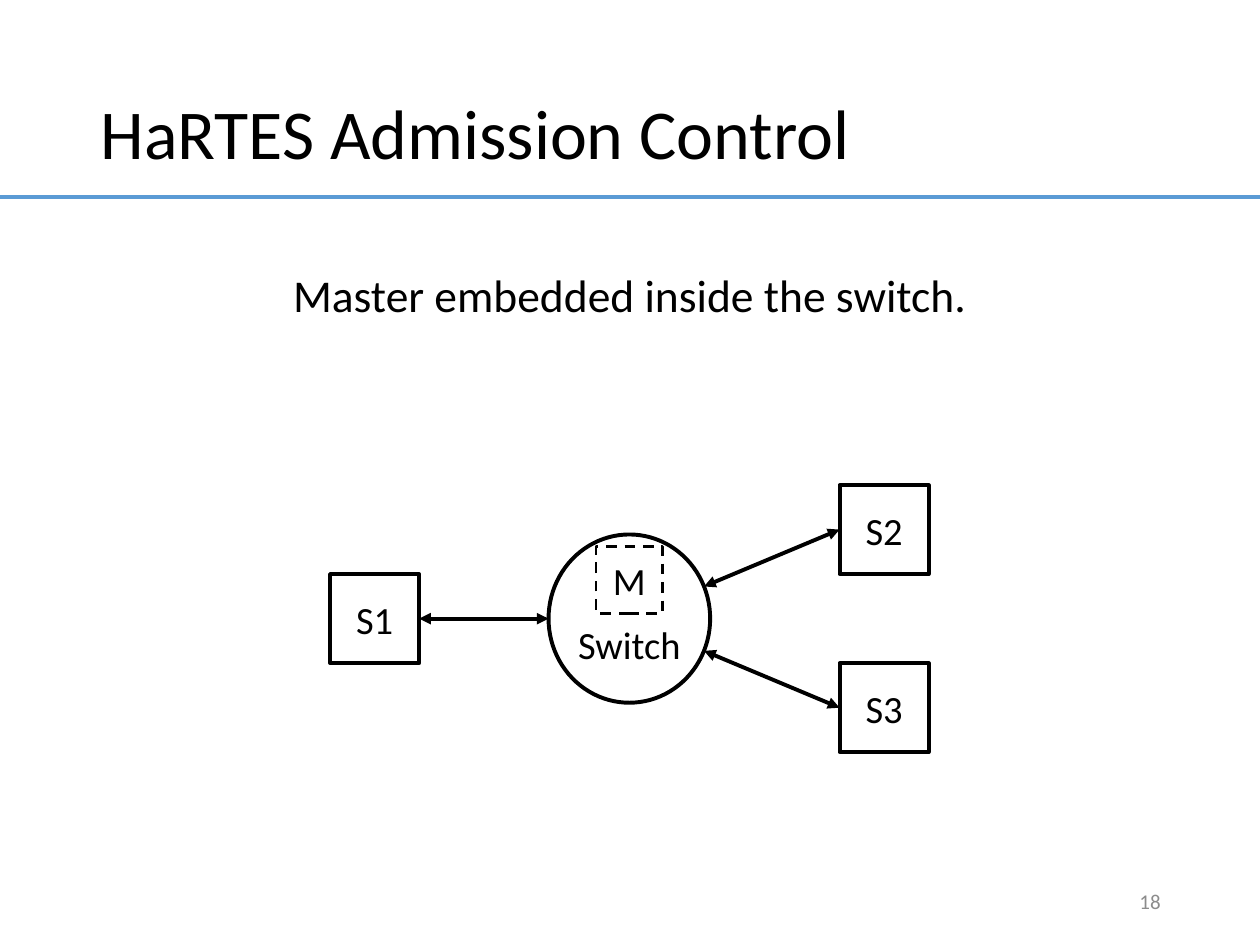
from collections import namedtuple
from math import cos, pi, sin

from lxml import etree
from pptx import Presentation
from pptx.dml.color import RGBColor
from pptx.enum.dml import MSO_LINE
from pptx.enum.shapes import MSO_CONNECTOR as CONNECTOR, MSO_SHAPE as SHAPE
from pptx.enum.text import MSO_ANCHOR as ANCHOR, PP_ALIGN as ALIGN
from pptx.oxml.ns import qn
from pptx.util import Inches, Pt

COLORS = {"ink": "000000", "rule": "5B9BD5", "number": "8C8C8C"}
FONT = "Calibri"
LEFT_SIDE, RIGHT_SIDE = 1, 3  # connection sites of a rectangle

Box = namedtuple("Box", "x y w h")
PAGE = Box(0, 0, 10, 7.5)


def part(box, x, y, w, h):
    """A box inside another, given in shares of it."""
    return Box(box.x + x * box.w, box.y + y * box.h, w * box.w, h * box.h)


def color(name):
    return RGBColor.from_string(COLORS[name])


def emu(lengths):
    return [Inches(length) for length in lengths]


def write(shape, text, size, align=ALIGN.CENTER, anchor=ANCHOR.MIDDLE, ink="ink"):
    frame = shape.text_frame
    frame.word_wrap = True
    frame.vertical_anchor = anchor
    paragraph = frame.paragraphs[0]
    paragraph.text = text
    paragraph.alignment = align
    paragraph.font.name = FONT
    paragraph.font.size = Pt(size)
    paragraph.font.color.rgb = color(ink)
    return paragraph


def add_label(slide, box, text, size, **style):
    return write(slide.shapes.add_textbox(*emu(box)), text, size, **style)


def add_outline(slide, kind, box, text=None, weight=2.25):
    shape = slide.shapes.add_shape(kind, *emu(box))
    shape.shadow.inherit = False
    shape.fill.background()
    shape.line.color.rgb = color("ink")
    shape.line.width = Pt(weight)
    if text:
        frame = shape.text_frame
        frame.margin_left = frame.margin_right = 0
        write(shape, text, 22)
    return shape


def add_line(slide, start, end, ink="ink", arrows=False):
    line = slide.shapes.add_connector(CONNECTOR.STRAIGHT, *emu(start + end))
    line.line.color.rgb = color(ink)
    line.line.width = Pt(2.25)
    if arrows:
        outline = line.line._get_or_add_ln()
        for tip in ("a:headEnd", "a:tailEnd"):
            etree.SubElement(outline, qn(tip), type="triangle")
    etree.SubElement(line._element.spPr, qn("a:effectLst"))
    return line


def add_header(slide, box):
    # Blue rule across the page, then the title above it
    rule_y = box.y + 0.85 * box.h
    add_line(slide, (PAGE.x, rule_y), (PAGE.w, rule_y), ink="rule")
    title = add_label(slide, part(box, 0.07, 0.18, 0.86, 0.82),
                      "HaRTES Admission Control", 40, align=ALIGN.LEFT)
    title.line_spacing = 0.9


def add_statement(slide, box):
    statement = add_label(slide, box, "Master embedded inside the switch.", 26,
                          anchor=ANCHOR.TOP)
    statement.line_spacing = 0.9


def add_network(slide, box):
    center_x, center_y = box.x + box.w / 2, box.y + box.h / 2
    node = box.h / 3
    right = box.x + box.w - node

    # Switch
    switch = part(box, 0.365, 0.185, 0.27, 0.63)
    add_outline(slide, SHAPE.OVAL, switch)

    # Stations: name, left, row, joined side, angle on the switch's rim
    stations = [
        ("S1", box.x, 1, RIGHT_SIDE, pi),
        ("S2", right, 0, LEFT_SIDE, -pi / 8),
        ("S3", right, 2, LEFT_SIDE, pi / 8),
    ]
    for name, left, row, side, angle in stations:
        station = add_outline(slide, SHAPE.RECTANGLE,
                              Box(left, box.y + row * node, node, node), name)
        rim = (center_x + switch.w / 2 * cos(angle),
               center_y + switch.h / 2 * sin(angle))
        link = add_line(slide, rim, rim, arrows=True)
        link.end_connect(station, side)

    # Switch label and the master embedded above it
    add_label(slide, part(box, 0.36, 0.485, 0.28, 0.28), "Switch", 22,
              anchor=ANCHOR.TOP)
    side = box.h / 4
    master = add_outline(
        slide, SHAPE.RECTANGLE,
        Box(center_x - side / 2, box.y + 0.23 * box.h, side, side), "M", 1.5)
    master.line.dash_style = MSO_LINE.DASH


def add_page_number(slide, box):
    add_label(slide, box, "18", 12, align=ALIGN.RIGHT, ink="number")


def main():
    deck = Presentation()
    deck.slide_width, deck.slide_height = Inches(PAGE.w), Inches(PAGE.h)
    slide = deck.slides.add_slide(deck.slide_layouts[6])
    add_header(slide, Box(0, 0, PAGE.w, 1.84))
    add_statement(slide, Box(0.69, 2.12, 8.62, 0.5))
    add_network(slide, Box(2.62, 3.85, 4.75, 2.12))
    add_page_number(slide, Box(7.06, 6.95, 2.25, 0.4))
    deck.save("out.pptx")


if __name__ == "__main__":
    main()
